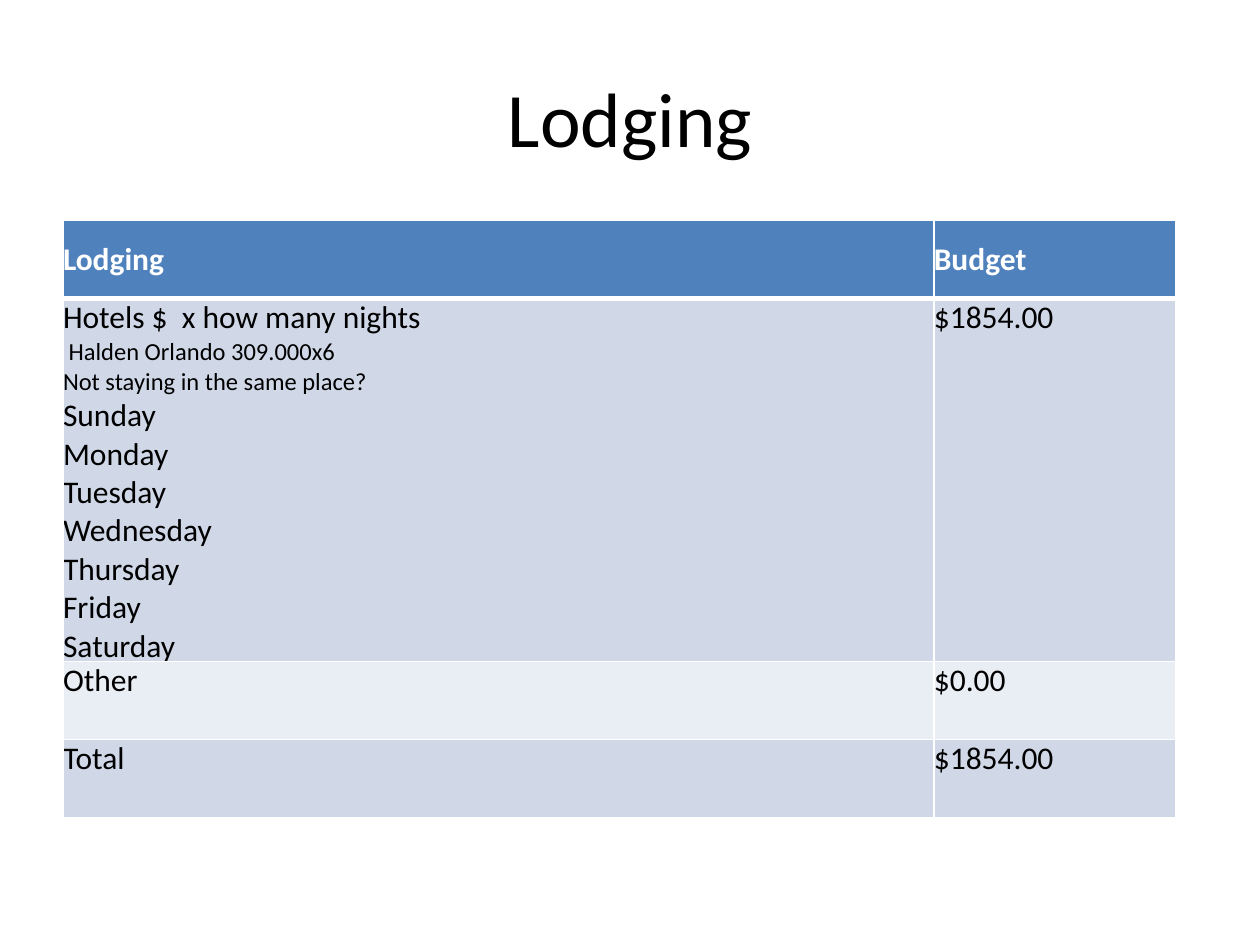
from lxml.etree import SubElement
from pptx import Presentation
from pptx.dml.color import RGBColor
from pptx.enum.text import MSO_ANCHOR, PP_ALIGN
from pptx.oxml.ns import qn
from pptx.util import Inches, Pt

WHITE = RGBColor(0xFF, 0xFF, 0xFF)
BLACK = RGBColor(0, 0, 0)
BLUE = RGBColor(0x4F, 0x81, 0xBD)
BAND = RGBColor(0xD0, 0xD8, 0xE8)
PALE = RGBColor(0xE9, 0xED, 0xF4)

DAYS = ["Sunday", "Monday", "Tuesday", "Wednesday", "Thursday", "Friday", "Saturday"]
# Each cell is a list of lines; a line is text or a (text, size) pair
ROWS = [
    (["Lodging"], ["Budget"]),
    (["Hotels $  x how many nights", (" Halden Orlando 309.000x6", 14),
      ("Not staying in the same place?", 14), *DAYS], ["$1854.00"]),
    (["Other"], ["$0.00"]),
    (["Total"], ["$1854.00"]),
]
FILLS = [BLUE, BAND, PALE, BAND]
WIDTHS = [6.92, 1.92]
HEIGHTS = [0.62, 2.88, 0.62, 0.62]


def write(frame, lines, size=18, color=BLACK, bold=False, align=PP_ALIGN.LEFT):
    for i, line in enumerate(lines):
        text, points = line if isinstance(line, tuple) else (line, size)
        para = frame.paragraphs[0] if i == 0 else frame.add_paragraph()
        para.alignment = align
        run = para.add_run()
        run.text = text
        font = run.font
        font.name, font.size, font.bold = "Calibri", Pt(points), bold
        font.color.rgb = color


def edge(cell, top=1, base=1):
    # Borders must come before the fill in the cell properties
    props = cell._tc.get_or_add_tcPr()
    for side, width in (("L", 1), ("R", 1), ("T", top), ("B", base)):
        line = SubElement(props, qn(f"a:ln{side}"), w=str(Pt(width)))
        fill = SubElement(line, qn("a:solidFill"))
        SubElement(fill, qn("a:srgbClr"), val=str(WHITE))


def add_title(slide, left, top, width, height):
    frame = slide.shapes.add_textbox(left, top, width, height).text_frame
    frame.word_wrap = True
    frame.vertical_anchor = MSO_ANCHOR.MIDDLE
    write(frame, ["Lodging"], size=44, align=PP_ALIGN.CENTER)


def add_budget(slide, left, top, width, height):
    table = slide.shapes.add_table(len(ROWS), len(WIDTHS), left, top, width, height).table
    for column, share in zip(table.columns, WIDTHS):
        column.width = int(width * share / sum(WIDTHS))
    for row, share in zip(table.rows, HEIGHTS):
        row.height = int(height * share / sum(HEIGHTS))
    for r, row in enumerate(ROWS):
        head = r == 0
        for c, lines in enumerate(row):
            cell = table.cell(r, c)
            cell.margin_left = cell.margin_right = 0
            cell.margin_top = cell.margin_bottom = 0
            cell.vertical_anchor = MSO_ANCHOR.MIDDLE if head else MSO_ANCHOR.TOP
            # The rule under the header is thicker
            edge(cell, top=3 if r == 1 else 1, base=3 if head else 1)
            cell.fill.solid()
            cell.fill.fore_color.rgb = FILLS[r]
            write(cell.text_frame, lines, color=WHITE if head else BLACK, bold=head)


def main():
    deck = Presentation()
    deck.slide_width, deck.slide_height = Inches(10), Inches(7.5)
    slide = deck.slides.add_slide(deck.slide_layouts[6])
    add_title(slide, Inches(0.5), Inches(0.3), Inches(9), Inches(1.25))
    add_budget(slide, Inches(0.5), Inches(1.75), Inches(8.83), Inches(4.74))
    deck.save("out.pptx")


if __name__ == "__main__":
    main()
